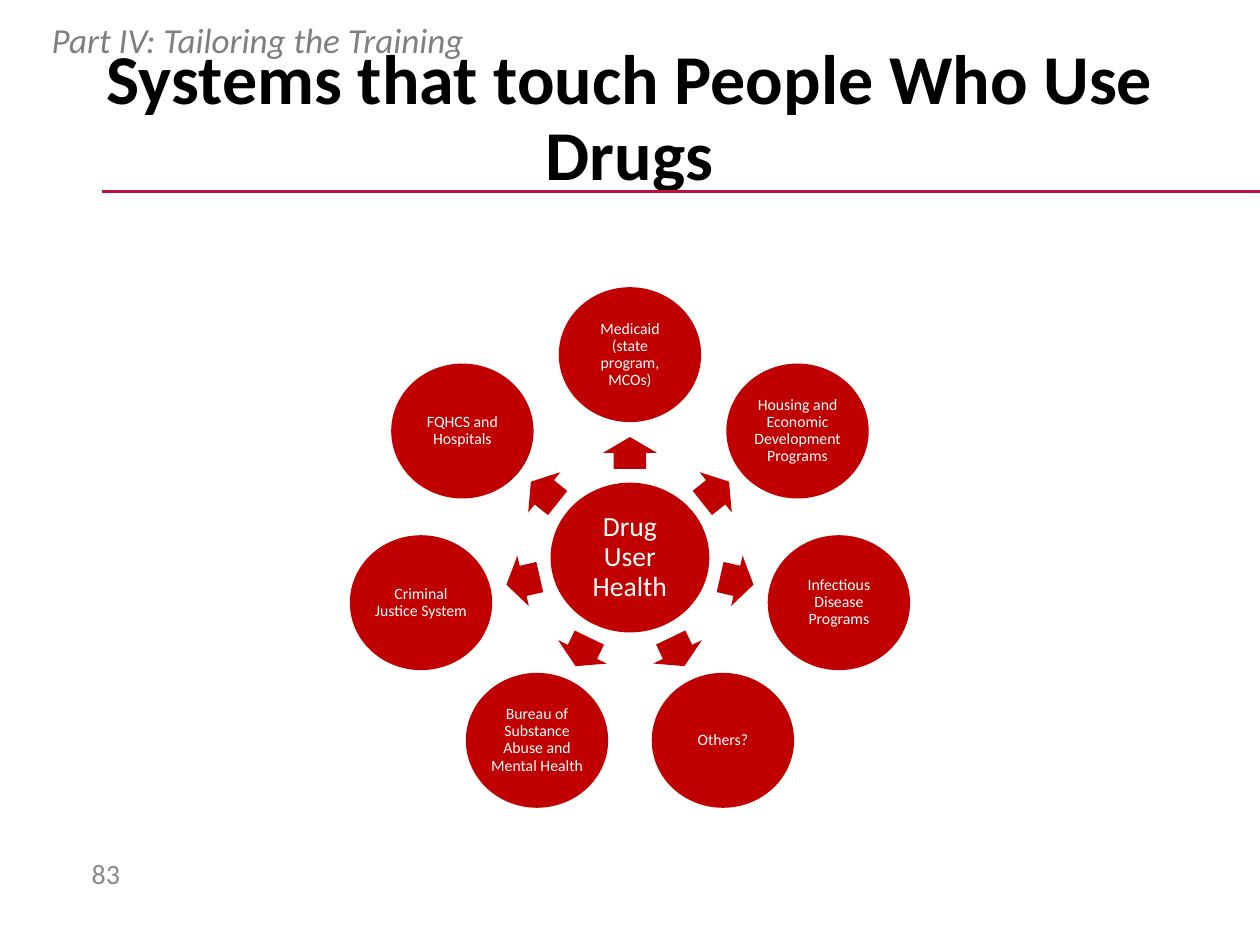
from math import cos, radians, sin

from lxml import etree
from pptx import Presentation
from pptx.dml.color import RGBColor
from pptx.enum.shapes import MSO_CONNECTOR, MSO_SHAPE
from pptx.enum.text import MSO_ANCHOR, MSO_AUTO_SIZE, PP_ALIGN
from pptx.oxml.ns import qn
from pptx.util import Cm, Pt

STRAIGHT = MSO_CONNECTOR.STRAIGHT
ELLIPSE, RIGHT_ARROW = MSO_SHAPE.OVAL, MSO_SHAPE.RIGHT_ARROW
TOP, MIDDLE = MSO_ANCHOR.TOP, MSO_ANCHOR.MIDDLE
LEFT, CENTER = PP_ALIGN.LEFT, PP_ALIGN.CENTER
NO_AUTOFIT = MSO_AUTO_SIZE.NONE

SYSTEMS = [
    "Medicaid (state program, MCOs)",
    "Housing and Economic Development Programs",
    "Infectious Disease Programs",
    "Others?",
    "Bureau of Substance Abuse and Mental Health",
    "Criminal Justice System",
    "FQHCS and Hospitals",
]
HUB = (12.7, 11.24)
CIRCLE_ORBIT = (4.32, 4.09)
ARROW_ORBIT = (2.21, 2.11)


def color(value):
    return RGBColor.from_string(value)


def orbit_point(orbit, angle):
    return (HUB[0] + orbit[0] * cos(radians(angle)),
            HUB[1] + orbit[1] * sin(radians(angle)))


class SlideBuilder:
    """Hold the style and the current slide, and add each kind of element."""

    font_name = "Calibri"
    red = "C00000"
    rule_red = "C40E3E"

    def __init__(self, slide):
        self.slide = slide

    def set_text(self, shape, text, size, font_color, align=CENTER, anchor=MIDDLE,
                 margins=(0.25, 0.13), spacing=0.9, **font_format):
        frame = shape.text_frame
        side, edge = (Cm(margin) for margin in margins)
        frame_format = {
            "word_wrap": True, "auto_size": NO_AUTOFIT, "vertical_anchor": anchor,
            "margin_left": side, "margin_right": side,
            "margin_top": edge, "margin_bottom": edge,
        }
        for name, value in frame_format.items():
            setattr(frame, name, value)
        paragraph = frame.paragraphs[0]
        paragraph.alignment = align
        paragraph.line_spacing = spacing
        run = paragraph.add_run()
        run.text = text
        font_format.update(name=self.font_name, size=Pt(size))
        for name, value in font_format.items():
            setattr(run.font, name, value)
        run.font.color.rgb = color(font_color)

    def title(self, text, left, top, width, height):
        title = self.slide.shapes.title
        box = {"left": left, "top": top, "width": width, "height": height}
        for name, value in box.items():
            setattr(title, name, Cm(value))
        self.set_text(title, text, 40, "000000", bold=True)

    def text_box(self, text, box, size, font_color, **text_format):
        shape = self.slide.shapes.add_textbox(*map(Cm, box))
        self.set_text(shape, text, size, font_color, align=LEFT, **text_format)

    def rule(self, left, right, top):
        line = self.slide.shapes.add_connector(
            STRAIGHT, Cm(left), Cm(top), Cm(right), Cm(top))
        line.line.color.rgb = color(self.rule_red)
        line.line.width = Pt(2.25)
        etree.SubElement(line._element.spPr, qn("a:effectLst"))

    def centered_shape(self, kind, center, width, height):
        shape = self.slide.shapes.add_shape(
            kind, Cm(center[0] - width / 2), Cm(center[1] - height / 2),
            Cm(width), Cm(height))
        shape.shadow.inherit = False
        shape.fill.solid()
        shape.fill.fore_color.rgb = color(self.red)
        shape.line.fill.background()
        return shape

    def circle(self, text, center, width, height, size, margin):
        shape = self.centered_shape(ELLIPSE, center, width, height)
        self.set_text(shape, text, size, "FFFFFF", margins=(margin, margin))

    def arrow(self, angle):
        steep = abs(sin(radians(angle))) > 0.7
        length, breadth = (0.64, 1.09) if steep else (0.69, 1.04)
        center = orbit_point(ARROW_ORBIT, angle)
        shape = self.centered_shape(RIGHT_ARROW, center, length, breadth)
        shape.adjustments[0] = 0.6
        shape.adjustments[1] = 0.5
        shape.rotation = angle % 360


def main():
    presentation = Presentation()
    presentation.slide_width = Cm(25.4)
    presentation.slide_height = Cm(19.05)
    slide = presentation.slides.add_slide(presentation.slide_layouts[5])
    builder = SlideBuilder(slide)

    builder.rule(2.06, 25.4, 3.86)
    builder.title("Systems that touch People Who Use Drugs", 1.75, 0.58, 21.89, 3.68)
    builder.text_box("83", (1.6, 17.09, 1.4, 1.02), 16, "888888", spacing=1.0)

    builder.circle("Drug User Health", HUB, 3.2, 3.02, 15.8, 0.05)
    for index, system in enumerate(SYSTEMS):
        angle = -90 + index * 360 / len(SYSTEMS)
        builder.arrow(angle)
        builder.circle(system, orbit_point(CIRCLE_ORBIT, angle), 2.87, 2.72, 9, 0.03)

    builder.text_box("Part IV: Tailoring the Training", (0.79, 0.33, 21.89, 1.24),
                     20, "7F7F7F", anchor=TOP, italic=True)
    presentation.save("out.pptx")


if __name__ == "__main__":
    main()
